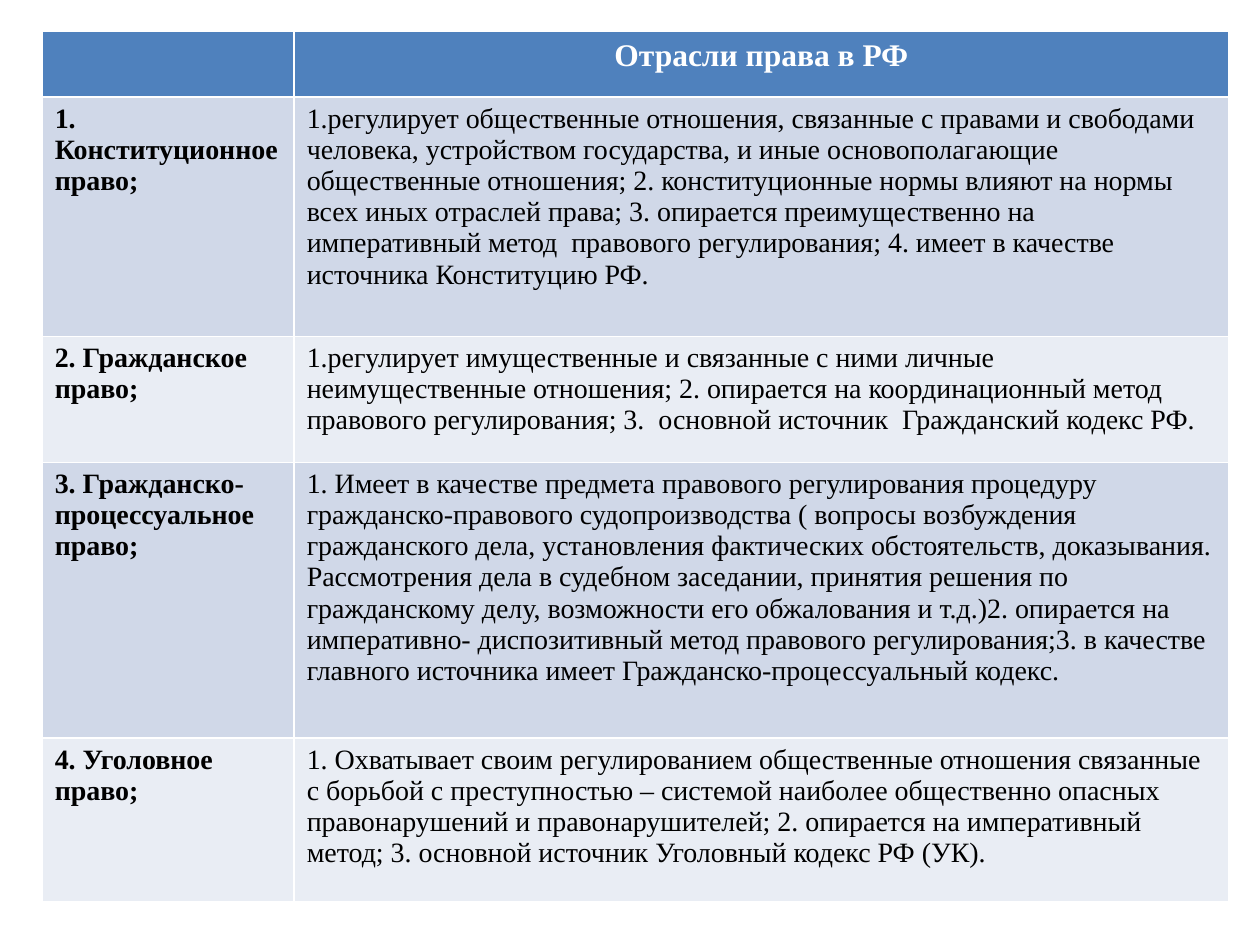
import pptx
import pptx.util
import pptx.dml.color
import pptx.enum.text

Cm, Pt = pptx.util.Cm, pptx.util.Pt
ALIGN = pptx.enum.text.PP_ALIGN

COLORS = {"header": "4F81BD", "odd": "D0D8E8", "even": "E9EDF4",
          "light": "FFFFFF", "dark": "000000"}
FONT = "Times New Roman"
HEADER = {"name": FONT, "size": Pt(18), "bold": True}
BRANCH = {"name": FONT, "size": Pt(16), "bold": True}
DETAIL = {"name": FONT, "size": Pt(16), "bold": False}

COL_WIDTHS = [Cm(5.08), Cm(18.84)]
ROW_HEIGHTS = [Cm(1.32), Cm(4.82), Cm(2.54), Cm(5.56), Cm(3.3)]

TITLE = "Отрасли права в РФ"
BRANCHES = [
    ("1. Конституционное право;",
     "1.регулирует общественные отношения, связанные с правами и свободами "
     "человека, устройством государства, и иные основополагающие общественные "
     "отношения; 2. конституционные нормы влияют на нормы всех иных отраслей "
     "права; 3. опирается преимущественно на императивный метод  правового "
     "регулирования; 4. имеет в качестве источника Конституцию РФ."),
    ("2. Гражданское право;",
     "1.регулирует имущественные и связанные с ними личные  неимущественные "
     "отношения; 2. опирается на координационный метод правового "
     "регулирования; 3.  основной источник  Гражданский кодекс РФ."),
    ("3. Гражданско-процессуальное право;",
     "1. Имеет в качестве предмета правового регулирования процедуру "
     "гражданско-правового судопроизводства ( вопросы возбуждения гражданского "
     "дела, установления фактических обстоятельств, доказывания. Рассмотрения "
     "дела в судебном заседании, принятия решения по гражданскому делу, "
     "возможности его обжалования и т.д.)2. опирается на императивно- "
     "диспозитивный метод правового регулирования;3. в качестве главного "
     "источника имеет Гражданско-процессуальный кодекс."),
    ("4. Уголовное право;",
     "1. Охватывает своим регулированием общественные отношения связанные с "
     "борьбой с преступностью – системой наиболее общественно опасных "
     "правонарушений и правонарушителей; 2. опирается на императивный метод; "
     "3. основной источник Уголовный кодекс РФ (УК)."),
]


def rgb(key):
    return pptx.dml.color.RGBColor.from_string(COLORS[key])


def fill_cell(cell, text, fill, color, font, align=None):
    cell.fill.solid()
    cell.fill.fore_color.rgb = rgb(fill)
    if not text:
        return
    p = cell.text_frame.paragraphs[0]
    p.alignment = align
    r = p.add_run()
    r.text = text
    for name, value in font.items():
        setattr(r.font, name, value)
    r.font.color.rgb = rgb(color)


def add_branches_table(s, left, top):
    """Table of law branches; the default table style draws the white rules."""
    table = s.shapes.add_table(len(ROW_HEIGHTS), len(COL_WIDTHS), left, top,
                               sum(COL_WIDTHS), sum(ROW_HEIGHTS)).table
    for col, width in zip(table.columns, COL_WIDTHS):
        col.width = width
    for row, height in zip(table.rows, ROW_HEIGHTS):
        row.height = height

    # Header row
    for i, text in enumerate(["", TITLE]):
        fill_cell(table.cell(0, i), text, "header", "light", HEADER, ALIGN.CENTER)

    # One banded row per branch
    for i, (branch, detail) in enumerate(BRANCHES, start=1):
        band = "odd" if i % 2 else "even"
        fill_cell(table.cell(i, 0), branch, band, "dark", BRANCH)
        fill_cell(table.cell(i, 1), detail, band, "dark", DETAIL)


def main():
    prs = pptx.Presentation()
    prs.slide_width, prs.slide_height = Cm(25.4), Cm(19.05)
    s = prs.slides.add_slide(prs.slide_layouts[6])
    add_branches_table(s, Cm(0.85), Cm(0.64))
    prs.save("out.pptx")


if __name__ == "__main__":
    main()
